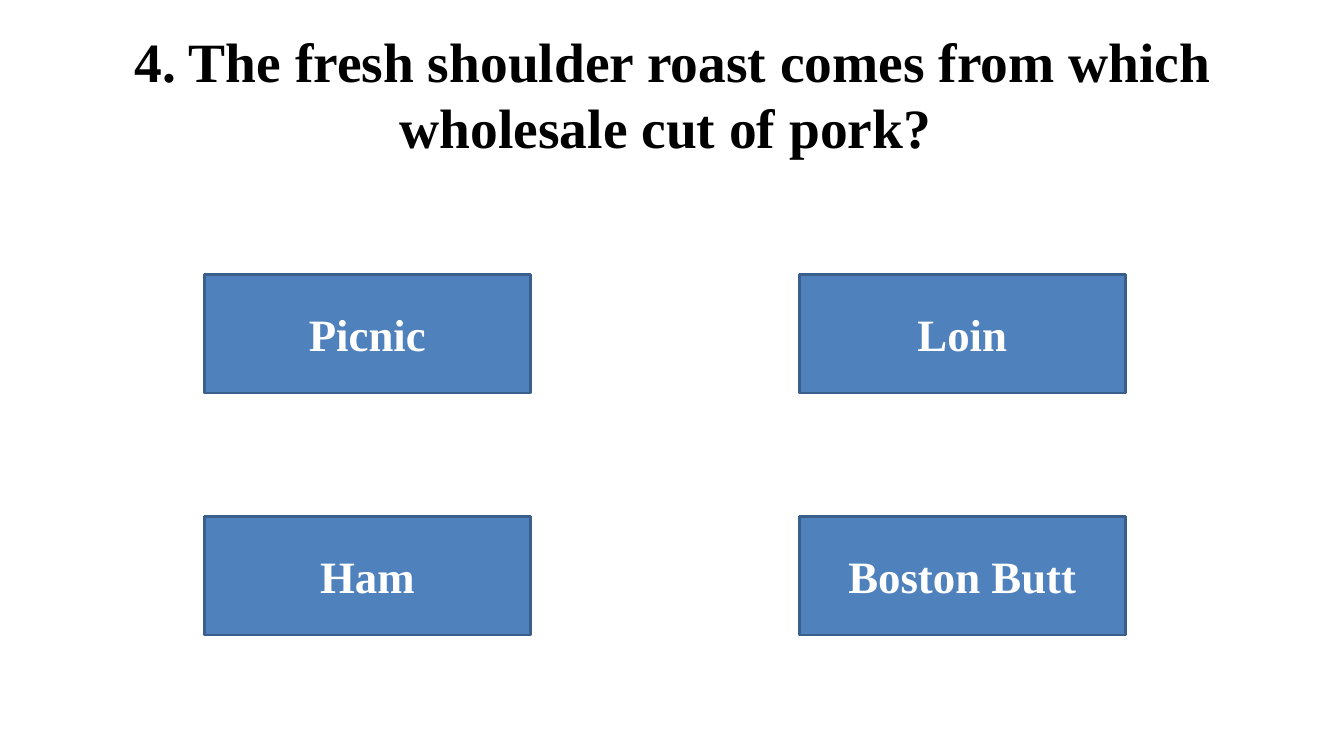
import pptx
import pptx.dml.color
import pptx.enum.shapes
import pptx.enum.text
import pptx.util

Inches = pptx.util.Inches
BLACK = pptx.dml.color.RGBColor(0x00, 0x00, 0x00)
WHITE = pptx.dml.color.RGBColor(0xFF, 0xFF, 0xFF)
BLUE = pptx.dml.color.RGBColor(0x4F, 0x81, 0xBD)
DARK_BLUE = pptx.dml.color.RGBColor(0x3A, 0x5F, 0x8C)


class QuizSlide:
    font_name = "Times New Roman"
    answer_size = (3.23, 1.18)

    def __init__(self, presentation):
        self.slide = presentation.slides.add_slide(presentation.slide_layouts[6])

    def add_label(self, shape, text, size, color):
        frame = shape.text_frame
        frame.word_wrap = True
        frame.vertical_anchor = pptx.enum.text.MSO_ANCHOR.MIDDLE
        paragraph = frame.paragraphs[0]
        paragraph.alignment = pptx.enum.text.PP_ALIGN.CENTER
        run = paragraph.add_run()
        run.text = text
        run.font.name = self.font_name
        run.font.size = pptx.util.Pt(size)
        run.font.bold = True
        run.font.color.rgb = color

    def question(self, text, left, top, width, height):
        box = self.slide.shapes.add_textbox(
            Inches(left), Inches(top), Inches(width), Inches(height))
        self.add_label(box, text, 39.6, BLACK)

    def answer(self, text, left, top):
        width, height = self.answer_size
        shape = self.slide.shapes.add_shape(
            pptx.enum.shapes.MSO_SHAPE.RECTANGLE,
            Inches(left), Inches(top), Inches(width), Inches(height))
        shape.shadow.inherit = False
        shape.fill.solid()
        shape.fill.fore_color.rgb = BLUE
        shape.line.color.rgb = DARK_BLUE
        shape.line.width = pptx.util.Pt(2)
        self.add_label(shape, text, 32, WHITE)


def main():
    presentation = pptx.Presentation()
    presentation.slide_width = Inches(13.33)
    presentation.slide_height = Inches(7.5)
    quiz = QuizSlide(presentation)

    # Question
    quiz.question("4. The fresh shoulder roast comes from which wholesale cut of pork? ",
                  0.67, 0.3, 12, 1.25)

    # Answer grid: two rows of two
    answers = [["Picnic", "Loin"], ["Ham", "Boston Butt"]]
    for row, labels in enumerate(answers):
        for column, label in enumerate(labels):
            quiz.answer(label, 2.03 + 5.9 * column, 2.72 + 2.4 * row)

    presentation.save("out.pptx")


if __name__ == "__main__":
    main()
